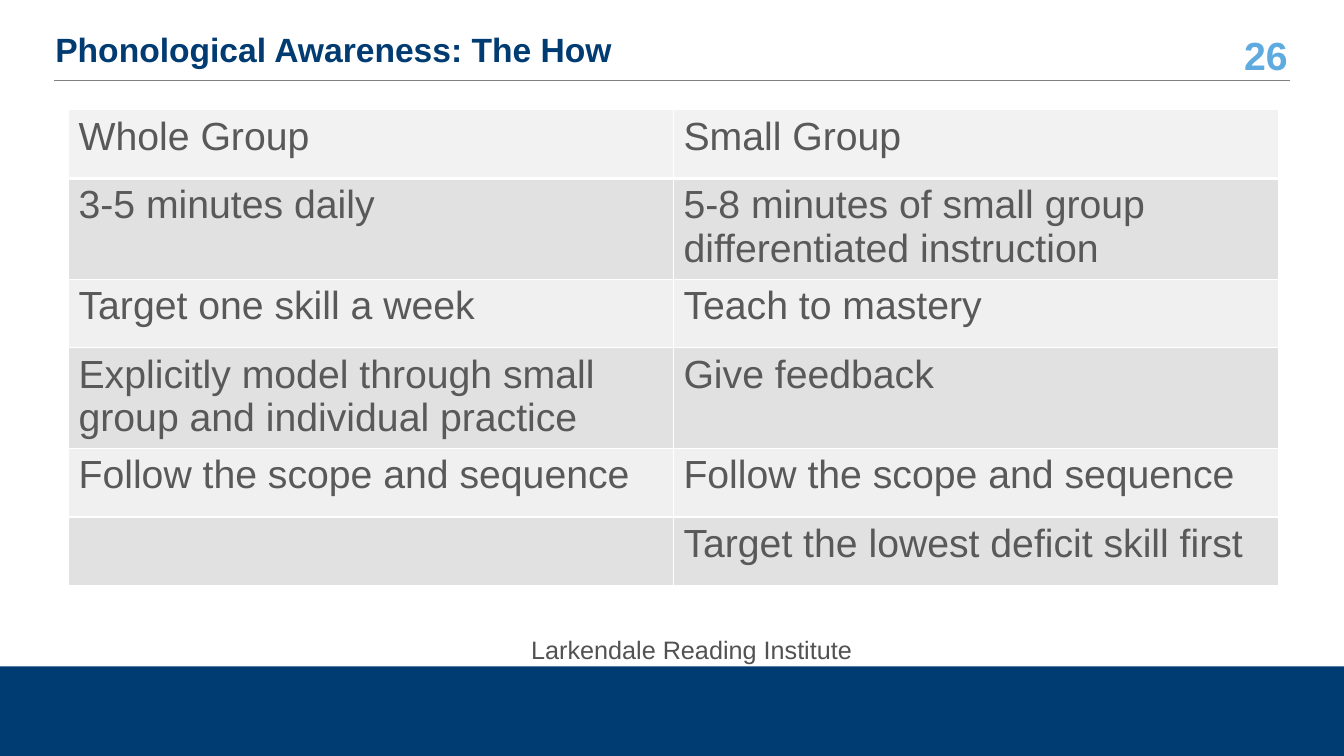
from dataclasses import dataclass

from lxml.etree import SubElement
from pptx import Presentation
from pptx.dml.color import RGBColor
from pptx.enum.shapes import MSO_CONNECTOR as Link, MSO_SHAPE as Form
from pptx.enum.text import MSO_ANCHOR as Anchor, PP_ALIGN as Align
from pptx.oxml.ns import qn
from pptx.slide import Slide
from pptx.table import _Cell as Cell
from pptx.text.text import _Paragraph as Para
from pptx.util import Inches, Length, Pt

WIDE, HIGH = Inches(13.33), Inches(7.5)
FONT = "Arial"
NAVY = RGBColor(0x00, 0x3B, 0x71)
SKY = RGBColor(0x5F, 0xAA, 0xDE)
RULE = RGBColor(0x80, 0x80, 0x80)
INK = RGBColor(0x59, 0x59, 0x59)
SLATE = RGBColor(0x52, 0x52, 0x52)
WHITE = RGBColor(0xFF, 0xFF, 0xFF)
HEAD = RGBColor(0xF2, 0xF2, 0xF2)
LIGHT = RGBColor(0xF0, 0xF0, 0xF0)
DARK = RGBColor(0xE1, 0xE1, 0xE1)

ROWS = [
    ("Whole Group", "Small Group"),
    ("3-5 minutes daily",
     "5-8 minutes of small group differentiated instruction"),
    ("Target one skill a week", "Teach to mastery"),
    ("Explicitly model through small group and individual practice",
     "Give feedback"),
    ("Follow the scope and sequence", "Follow the scope and sequence"),
    ("", "Target the lowest deficit skill first"),
]
SHORT, TALL = 9.07, 13.33
DEPTHS = [SHORT, TALL, SHORT, TALL, SHORT, SHORT]


def across(share: float) -> Length:
    """Turn a percentage of the slide's width into a length."""
    return Length(round(WIDE * share / 100))


def down(share: float) -> Length:
    """Turn a percentage of the slide's height into a length."""
    return Length(round(HIGH * share / 100))


@dataclass(frozen=True)
class Box:
    """A frame in percentages of the slide's width and height."""
    left: float
    top: float
    width: float
    height: float

    def frame(self) -> tuple[Length, Length, Length, Length]:
        return (across(self.left), down(self.top),
                across(self.width), down(self.height))


@dataclass(frozen=True)
class Label:
    text: str
    box: Box
    size: int
    color: RGBColor
    bold: bool = False
    align: Align = Align.LEFT
    anchor: Anchor = Anchor.MIDDLE
    space: float = 1.0


BAND = Box(0, 88.13, 100, 11.87)
GRID = Box(5.1, 14.53, 90.02, sum(DEPTHS))
LABELS = [
    Label("26", Box(90.55, 4.4, 6, 5.6), 28, SKY, True, Align.RIGHT),
    Label("Phonological Awareness: The How", Box(3.38, 4, 87.02, 5.6),
          24, NAVY, True, space=0.9),
    Label("Larkendale Reading Institute", Box(38.78, 83.2, 26.78, 5.33),
          18, SLATE, anchor=Anchor.TOP),
]


def add_run(para: Para, text: str, size: int, color: RGBColor,
            bold: bool = False) -> None:
    run = para.add_run()
    run.text = text
    run.font.name = FONT
    run.font.size = Pt(size)
    run.font.bold = bold
    run.font.color.rgb = color


def add_band(slide: Slide) -> None:
    band = slide.shapes.add_shape(Form.RECTANGLE, *BAND.frame())
    band.shadow.inherit = False
    band.fill.solid()
    band.fill.fore_color.rgb = NAVY
    band.line.fill.background()


def add_rule(slide: Slide) -> None:
    rule = slide.shapes.add_connector(
        Link.STRAIGHT, across(96.02), down(10.67), across(4.05), down(10.67))
    rule.line.color.rgb = RULE
    rule.line.width = Pt(0.5)
    SubElement(rule._element.spPr, qn("a:effectLst"))


def add_label(slide: Slide, label: Label) -> None:
    frame = slide.shapes.add_textbox(*label.box.frame()).text_frame
    frame.word_wrap = True
    frame.vertical_anchor = label.anchor
    para = frame.paragraphs[0]
    para.alignment = label.align
    para.line_spacing = label.space
    add_run(para, label.text, label.size, label.color, label.bold)


def add_edges(cell: Cell, base: float) -> None:
    """Draw white borders, the bottom one as thick as base."""
    props = cell._tc.get_or_add_tcPr()
    sides = {"L": 1, "R": 1, "T": 1, "B": base}
    for spot, (side, width) in enumerate(sides.items()):
        edge = SubElement(props, qn(f"a:ln{side}"), w=str(Pt(width)))
        fill = SubElement(edge, qn("a:solidFill"))
        SubElement(fill, qn("a:srgbClr"), val=str(WHITE))
        props.insert(spot, edge)


def add_grid(slide: Slide) -> None:
    count = len(ROWS[0])
    table = slide.shapes.add_table(len(ROWS), count, *GRID.frame()).table
    for col in table.columns:
        col.width = across(GRID.width / count)
    for row, (texts, depth) in enumerate(zip(ROWS, DEPTHS)):
        table.rows[row].height = down(depth)
        shade = HEAD if row == 0 else DARK if row % 2 else LIGHT
        for col, text in enumerate(texts):
            cell = table.cell(row, col)
            cell.fill.solid()
            cell.fill.fore_color.rgb = shade
            add_edges(cell, 3 if row == 0 else 1)
            if text:
                add_run(cell.text_frame.paragraphs[0], text, 28, INK)


def main() -> None:
    deck = Presentation()
    deck.slide_width, deck.slide_height = WIDE, HIGH
    slide = deck.slides.add_slide(deck.slide_layouts[6])
    add_band(slide)
    add_rule(slide)
    add_grid(slide)
    for label in LABELS:
        add_label(slide, label)
    deck.save("out.pptx")


if __name__ == "__main__":
    main()
